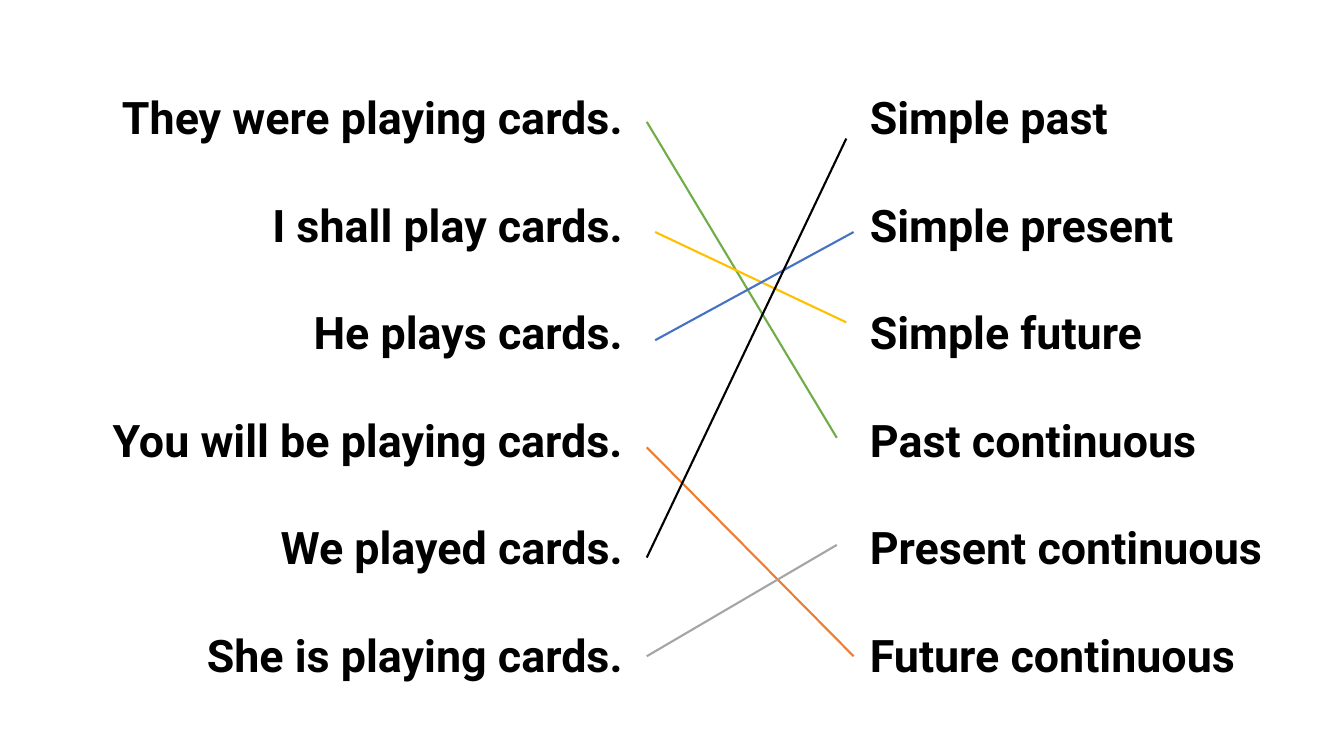
from collections import namedtuple

from lxml import etree
from pptx import Presentation
from pptx.dml.color import RGBColor
from pptx.enum.shapes import MSO_CONNECTOR as Connector
from pptx.enum.text import MSO_AUTO_SIZE as AutoSize, PP_ALIGN as Align
from pptx.oxml.ns import qn
from pptx.util import Pt

PX = 9525  # EMU per px, 96 px to the inch
Box = namedtuple("Box", "left top width height")

SLIDE = Box(0, 0, 1280, 720)
SENTENCES_BOX = Box(0, 81, 603, 578)
MATCHES_BOX = Box(603, 81, 216, 578)
TENSES_BOX = Box(819, 81, 461, 578)

SENTENCES = [
    "They were playing cards.",
    "I shall play cards.",
    "He plays cards.",
    "You will be playing cards.",
    "We played cards.",
    "She is playing cards.",
]
TENSES = [
    "Simple past",
    "Simple present",
    "Simple future",
    "Past continuous",
    "Present continuous",
    "Future continuous",
]
# Start and end within the matches box, in px, then colour
MATCHES = [
    ((13, 35), (194, 336), "70AD47"),
    ((21, 140), (203, 226), "FFC000"),
    ((21, 243), (210, 140), "4472C4"),
    ((13, 345), (210, 544), "ED7D31"),
    ((13, 450), (203, 51), "000000"),
    ((13, 544), (194, 438), "A5A5A5"),
]


def px(length):
    return length * PX


def color(value):
    return RGBColor.from_string(value)


def add_phrase_column(page, box, phrases, align):
    frame = page.shapes.add_textbox(*map(px, box)).text_frame
    frame.word_wrap = True
    frame.auto_size = AutoSize.SHAPE_TO_FIT_TEXT
    for index, phrase in enumerate(phrases):
        para = frame.paragraphs[0] if index == 0 else frame.add_paragraph()
        para.alignment = align
        if index:
            para.space_before = Pt(38.4)
        run = para.add_run()
        run.text = phrase
        run.font.name = "Roboto"
        run.font.size = Pt(32)
        run.font.bold = True
        run.font.color.rgb = color("000000")


def add_match_lines(page, box, matches):
    for start, end, line_color in matches:
        ends = [px(corner + offset) for point in (start, end)
                for corner, offset in zip((box.left, box.top), point)]
        line = page.shapes.add_connector(Connector.STRAIGHT, *ends)
        line.line.color.rgb = color(line_color)
        line.line.width = Pt(1.5)
        etree.SubElement(line._element.spPr, qn("a:effectLst"))


def main():
    deck = Presentation()
    deck.slide_width, deck.slide_height = px(SLIDE.width), px(SLIDE.height)
    page = deck.slides.add_slide(deck.slide_layouts[6])
    add_phrase_column(page, SENTENCES_BOX, SENTENCES, Align.RIGHT)
    add_phrase_column(page, TENSES_BOX, TENSES, Align.LEFT)
    add_match_lines(page, MATCHES_BOX, MATCHES)
    deck.save("out.pptx")


if __name__ == "__main__":
    main()
